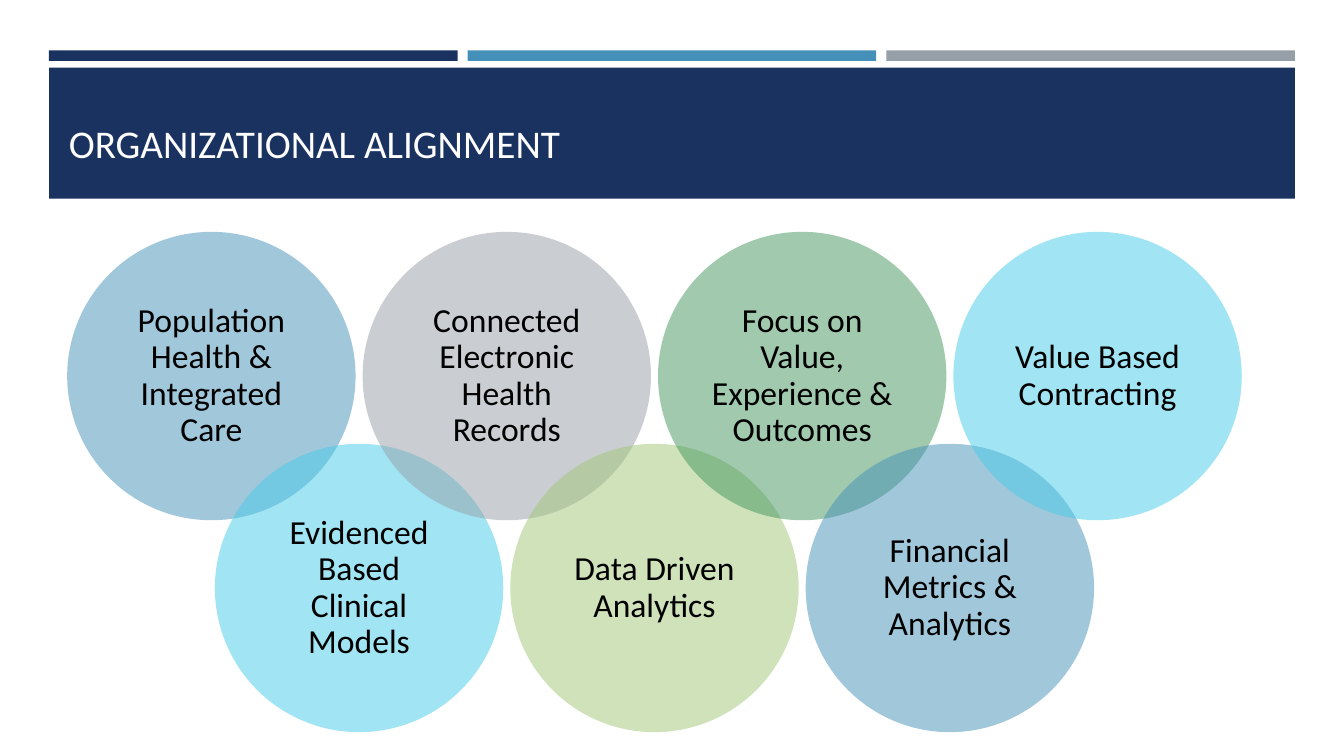
import pptx
import pptx.util
import pptx.dml.color
import pptx.enum.shapes
import pptx.enum.text
import pptx.oxml.ns
import lxml.etree

Pt = pptx.util.Pt
SHAPES = pptx.enum.shapes.MSO_SHAPE
ANCHOR = pptx.enum.text.MSO_ANCHOR
ALIGN = pptx.enum.text.PP_ALIGN

NAVY, BLUE, GREY = "1A3260", "4590B8", "969FA7"
CYAN, LIME, GREEN = "45CBE8", "A2C777", "42955F"
THEMES = [
    ("Population Health & Integrated Care", BLUE),
    ("Evidenced Based Clinical Models", CYAN),
    ("Connected Electronic Health Records", GREY),
    ("Data Driven Analytics", LIME),
    ("Focus on Value, Experience & Outcomes", GREEN),
    ("Financial Metrics & Analytics", BLUE),
    ("Value Based Contracting", CYAN),
]


def paint(color_owner, color):
    color_owner.rgb = pptx.dml.color.RGBColor.from_string(color)


def add_filled(slide, kind, left, top, width, height, color, opacity=100):
    filled = slide.shapes.add_shape(kind, Pt(left), Pt(top), Pt(width), Pt(height))
    filled.shadow.inherit = False
    filled.line.fill.background()
    filled.fill.solid()
    paint(filled.fill.fore_color, color)
    if opacity < 100:
        qn = pptx.oxml.ns.qn
        srgb = filled.fill._xPr.find(qn("a:solidFill")).find(qn("a:srgbClr"))
        lxml.etree.SubElement(srgb, qn("a:alpha")).set("val", str(opacity * 1000))
    return filled


def add_words(paragraph, words, size, color):
    run = paragraph.add_run()
    run.text = words
    run.font.name = "Calibri"
    run.font.size = Pt(size)
    paint(run.font.color, color)


def add_accent_bars(slide, left, top, width, height, gap):
    colors = [NAVY, BLUE, GREY]
    bar_width = (width - gap * (len(colors) - 1)) / len(colors)
    for index, color in enumerate(colors):
        bar_left = left + index * (bar_width + gap)
        add_filled(slide, SHAPES.RECTANGLE, bar_left, top, bar_width, height, color)


def add_heading(slide, left, top, width, height):
    add_filled(slide, SHAPES.RECTANGLE, left, top, width, height, NAVY)
    heading = slide.shapes.title
    heading.left, heading.top = Pt(left + 7), Pt(top - 30)
    heading.width, heading.height = Pt(828), Pt(104.4)
    frame = heading.text_frame
    frame.word_wrap = True
    frame.vertical_anchor = ANCHOR.BOTTOM
    paragraph = frame.paragraphs[0]
    paragraph.alignment = ALIGN.LEFT
    add_words(paragraph, "ORGANIZATIONAL ALIGNMENT", 28, "FFFFFF")


def add_theme_circles(slide, left, top, width, height, diameter):
    step = (width - diameter) / (len(THEMES) - 1)
    drop = height - diameter
    for index, (theme, color) in enumerate(THEMES):
        circle = add_filled(slide, SHAPES.OVAL, left + index * step,
                            top + index % 2 * drop, diameter, diameter, color, 50)
        frame = circle.text_frame
        frame.word_wrap = True
        frame.vertical_anchor = ANCHOR.MIDDLE
        frame.margin_left = frame.margin_right = Pt(7.2)
        frame.margin_top = frame.margin_bottom = Pt(7.2)
        paragraph = frame.paragraphs[0]
        paragraph.alignment = ALIGN.CENTER
        paragraph.line_spacing = 0.9
        add_words(paragraph, theme, 24, "000000")


def main():
    deck = pptx.Presentation()
    deck.slide_width, deck.slide_height = Pt(960), Pt(540)
    slide = deck.slides.add_slide(deck.slide_layouts[5])
    add_accent_bars(slide, 35, 36, 890, 7.5, 7.2)
    add_heading(slide, 35, 48.4, 890, 93.6)
    add_theme_circles(slide, 48, 165.6, 839, 357.4, 206)
    tree = slide.shapes._spTree
    heading = slide.shapes.title._element
    tree.remove(heading)
    tree.insert(6, heading)
    deck.save("out.pptx")


if __name__ == "__main__":
    main()
